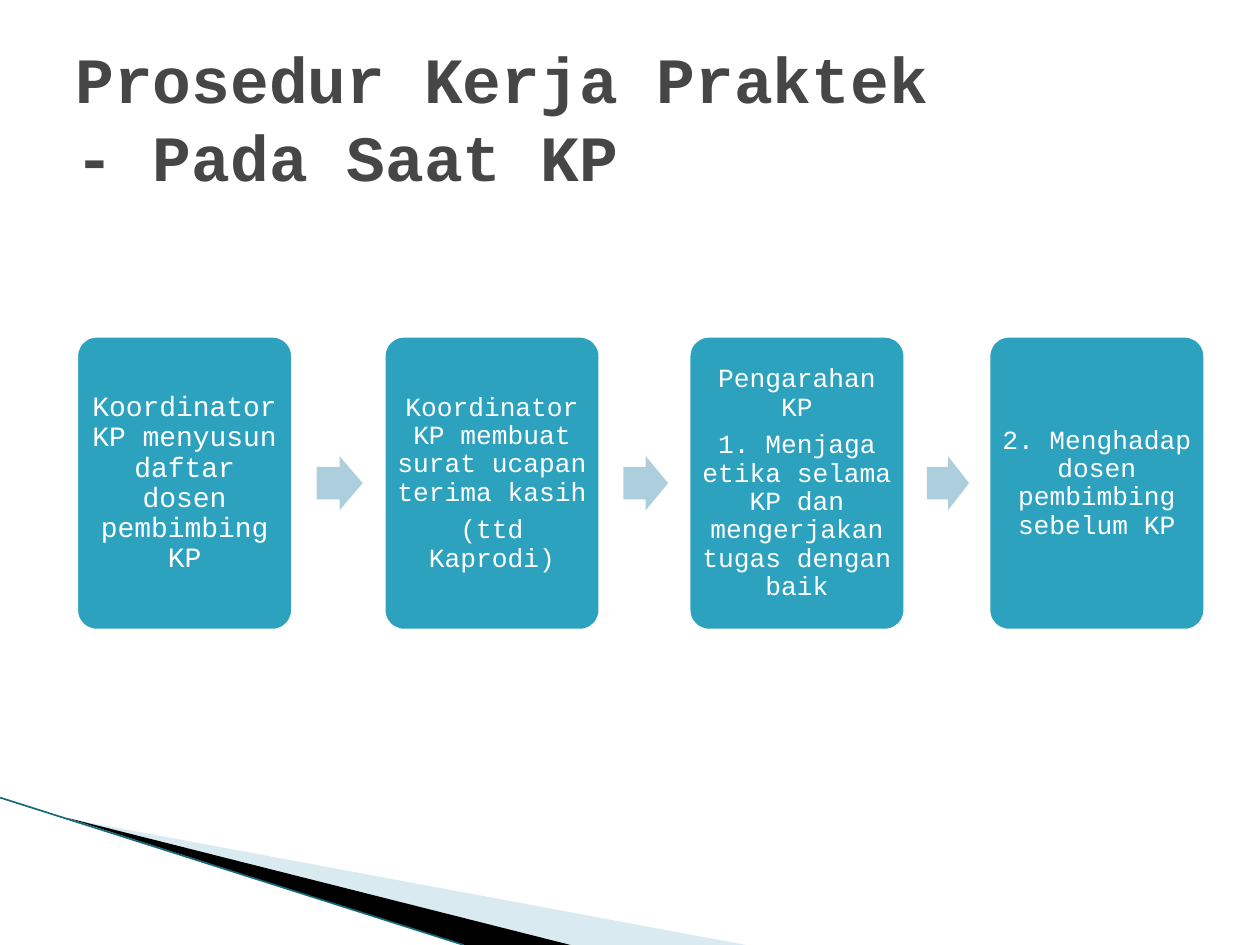
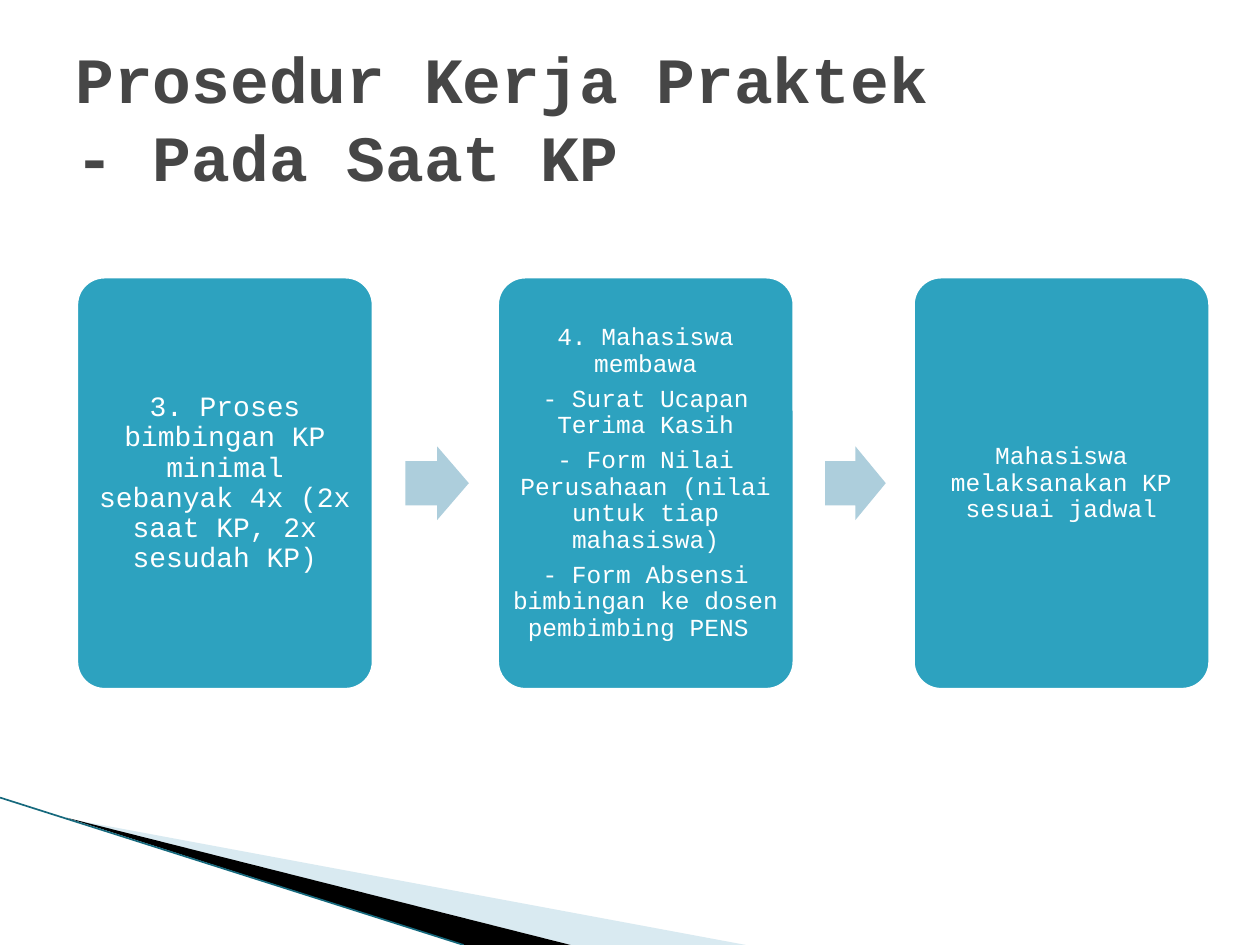
from dataclasses import dataclass
from itertools import pairwise

from lxml import etree
from pptx import Presentation
from pptx import util as u
from pptx.dml.color import RGBColor
from pptx.enum import shapes, text
from pptx.oxml.ns import qn


@dataclass(frozen=True)
class Theme:
    font: str = "Courier New"
    title_size: float = 36.9
    title_color: str = "464646"
    card_fill: str = "2DA2BF"
    card_text: str = "FFFFFF"
    card_border: str = "FFFFFF"
    arrow_fill: str = "ADCEDC"
    pale_wedge: str = "A0CBDC"
    dark_wedge: str = "000000"
    edge_line: str = "16697D"


THEME = Theme()
TITLE = "Prosedur Kerja Praktek\v- Pada Saat KP"
TITLE_BOX = (0.5, 0.3, 9, 1.25)
FOOTER_BOX = (0, 6.33, 10, 1.17)

STEPS_BEFORE = [
    (0.59, 16, ["Koordinator KP menyusun daftar dosen pembimbing KP"]),
    (3.03, 15, ["Koordinator KP membuat surat ucapan terima kasih", "(ttd Kaprodi)"]),
    (5.45, 15, ["Pengarahan KP",
                "1. Menjaga etika selama KP dan mengerjakan tugas dengan baik"]),
    (7.83, 15, ["2. Menghadap dosen pembimbing sebelum KP"]),
]
STEPS_DURING = [
    (0.59, 16, ["3. Proses bimbingan KP minimal sebanyak 4x (2x saat KP, 2x sesudah KP)"]),
    (3.93, 14, ["4. Mahasiswa membawa",
                "- Surat Ucapan Terima Kasih",
                "- Form Nilai Perusahaan (nilai untuk tiap mahasiswa)",
                "- Form Absensi bimbingan ke dosen pembimbing PENS "]),
    (7.23, 14, ["Mahasiswa melaksanakan KP sesuai jadwal"]),
]


def inches(*values):
    return [u.Inches(value) for value in values]


def paint(shape, color):
    shape.shadow.inherit = False
    shape.fill.solid()
    shape.fill.fore_color.rgb = RGBColor.from_string(color)
    shape.line.fill.background()


def style_runs(paragraph, size, color, bold=False):
    for run in paragraph.runs:
        run.font.name = THEME.font
        run.font.size = u.Pt(size)
        run.font.bold = bold
        run.font.color.rgb = RGBColor.from_string(color)


def add_wedge(slide, points, color):
    start, *rest = [inches(*point) for point in points]
    builder = slide.shapes.build_freeform(*start)
    builder.add_line_segments(rest)
    wedge = builder.convert_to_shape()
    paint(wedge, color)
    return wedge


def add_footer(slide, box):
    left, top, width, height = box
    bottom = top + height
    pale = add_wedge(
        slide,
        [(left + 0.55, top + 0.17), (left + 5.92, bottom), (left + 4.53, bottom)],
        THEME.pale_wedge)
    color = pale.fill._xPr.find(f".//{qn('a:srgbClr')}")
    etree.SubElement(color, qn("a:alpha"), val="40000")
    add_wedge(
        slide,
        [(left + 0.53, top + 0.16), (left + 4.53, bottom), (left + 3.68, bottom)],
        THEME.dark_wedge)
    edge = slide.shapes.add_connector(
        shapes.MSO_CONNECTOR.STRAIGHT, *inches(left, top, left + 3.68, bottom))
    edge.line.color.rgb = RGBColor.from_string(THEME.edge_line)
    edge.line.width = u.Pt(0.95)
    etree.SubElement(edge._element.spPr, qn("a:effectLst"))


def add_title(slide, box):
    text_frame = slide.shapes.add_textbox(*inches(*box)).text_frame
    text_frame.word_wrap = True
    text_frame.vertical_anchor = text.MSO_ANCHOR.MIDDLE
    text_frame.text = TITLE
    style_runs(text_frame.paragraphs[0], THEME.title_size, THEME.title_color, bold=True)


def add_card(slide, box, size, lines):
    card = slide.shapes.add_shape(shapes.MSO_SHAPE.ROUNDED_RECTANGLE, *inches(*box))
    card.adjustments[0] = 0.1
    paint(card, THEME.card_fill)
    card.line.color.rgb = RGBColor.from_string(THEME.card_border)
    card.line.width = u.Pt(4.33)
    text_frame = card.text_frame
    text_frame.word_wrap = True
    text_frame.vertical_anchor = text.MSO_ANCHOR.MIDDLE
    for side in ("left", "top", "right", "bottom"):
        setattr(text_frame, f"margin_{side}", u.Pt(size * 0.3))
    text_frame.text = "\n".join(lines)
    for paragraph in text_frame.paragraphs:
        paragraph.alignment = text.PP_ALIGN.CENTER
        paragraph.line_spacing = 0.9
        paragraph.space_after = u.Pt(size * 0.35)
        style_runs(paragraph, size, THEME.card_text)


def add_arrow(slide, gap_left, gap_right, middle, height):
    gap = gap_right - gap_left
    arrow = slide.shapes.add_shape(
        shapes.MSO_SHAPE.RIGHT_ARROW,
        *inches(gap_left + gap * 0.25, middle - height / 2, gap * 0.53, height))
    arrow.adjustments[0] = 0.6
    arrow.adjustments[1] = 0.5
    paint(arrow, THEME.arrow_fill)


def add_process(slide, steps, top, card_width, card_height):
    for left, size, lines in steps:
        add_card(slide, (left, top, card_width, card_height), size, lines)
    for (left, *_), (next_left, *_) in pairwise(steps):
        add_arrow(slide, left + card_width, next_left,
                  top + card_height / 2, card_width * 0.245)


def add_procedure_slide(presentation, steps, top, card_width, card_height):
    slide = presentation.slides.add_slide(presentation.slide_layouts[6])
    add_footer(slide, FOOTER_BOX)
    add_process(slide, steps, top, card_width, card_height)
    add_title(slide, TITLE_BOX)


def main():
    presentation = Presentation()
    presentation.slide_width, presentation.slide_height = inches(10, 7.5)
    add_procedure_slide(presentation, STEPS_BEFORE, 2.65, 1.75, 2.37)
    add_procedure_slide(presentation, STEPS_DURING, 2.18, 2.39, 3.31)
    presentation.save("out.pptx")


if __name__ == "__main__":
    main()
